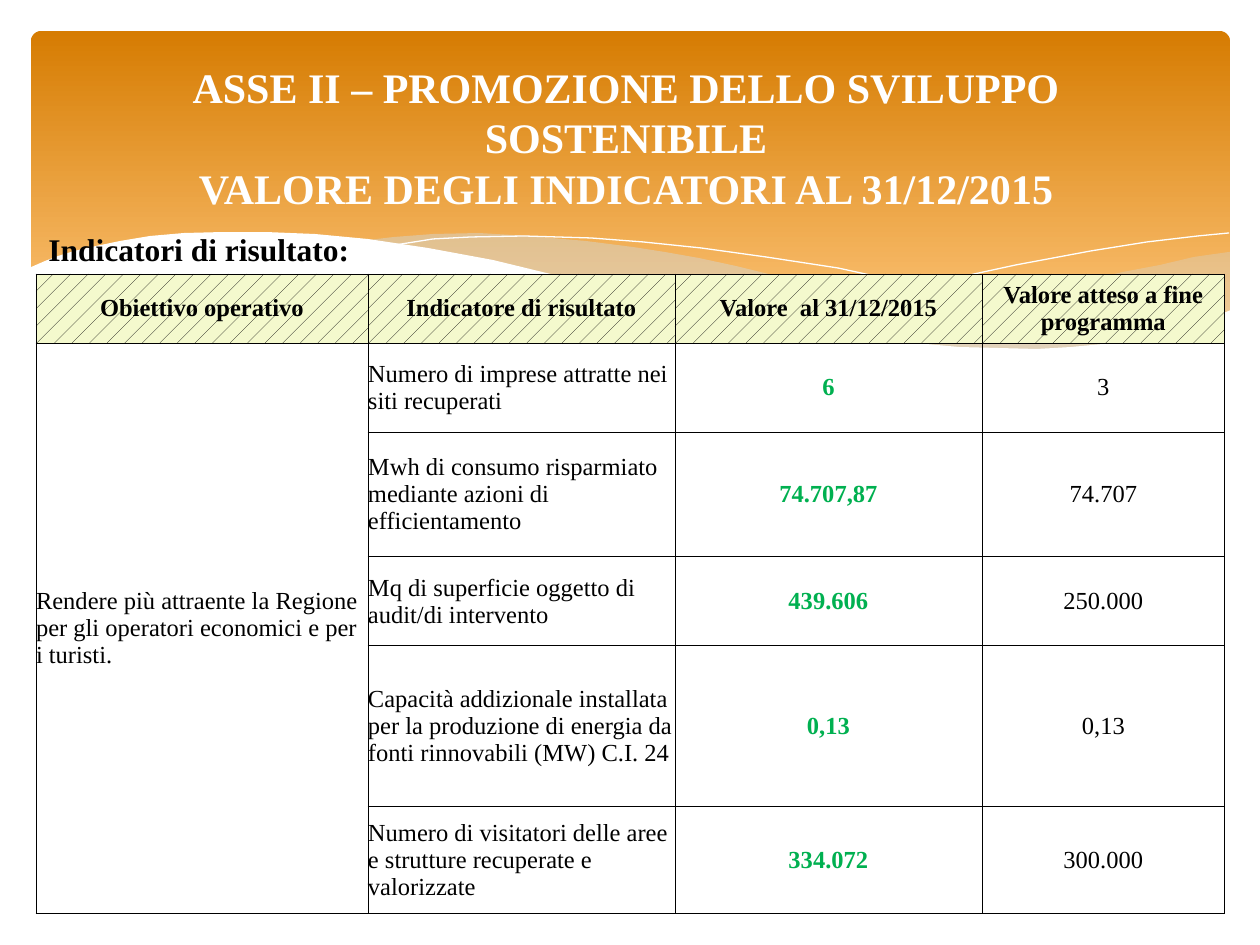
"""Build the slide with the result indicators of Asse II at 31/12/2015."""
from lxml.etree import SubElement
from pptx import Presentation
from pptx.dml.color import RGBColor
from pptx.enum.dml import MSO_PATTERN
from pptx.enum.shapes import MSO_SHAPE
from pptx.enum.text import MSO_ANCHOR, MSO_AUTO_SIZE, PP_ALIGN
from pptx.oxml import parse_xml
from pptx.oxml.ns import nsdecls, qn
from pptx.util import Emu, Pt

EMU_PER_PX = 914400 / 126
FONT = "Times New Roman"
BLACK = RGBColor(0x00, 0x00, 0x00)
WHITE = RGBColor(0xFF, 0xFF, 0xFF)
GREEN = RGBColor(0x00, 0xB0, 0x50)
MIST = RGBColor(0xCC, 0xDD, 0xEA)
CREAM = RGBColor(0xF4, 0xF9, 0xCD)
DARK_ORANGE = RGBColor(0xD6, 0x7C, 0x02)
LIGHT_ORANGE = RGBColor(0xFE, 0xC6, 0x7B)

TITLE = ["ASSE II – PROMOZIONE DELLO SVILUPPO SOSTENIBILE",
         "VALORE DEGLI INDICATORI AL 31/12/2015"]
SUBTITLE = "Indicatori di risultato:"
HEADER = ["Obiettivo operativo", "Indicatore di risultato",
          "Valore  al 31/12/2015", "Valore atteso a fine programma"]
OBJECTIVE = "Rendere più attraente la Regione per gli operatori economici e per i turisti."
INDICATORS = [
    ("Numero di imprese attratte nei siti recuperati", "6", "3"),
    ("Mwh di consumo risparmiato mediante azioni di efficientamento", "74.707,87", "74.707"),
    ("Mq di superficie oggetto di audit/di intervento", "439.606", "250.000"),
    ("Capacità addizionale installata per la produzione di energia da fonti "
     "rinnovabili (MW) C.I. 24", "0,13", "0,13"),
    ("Numero di visitatori delle aree e strutture recuperate e valorizzate",
     "334.072", "300.000"),
]
COLUMN_WIDTHS = [332, 307, 307, 243]
ROW_HEIGHTS = [69, 89, 125, 89, 161, 107]

RIGHT_WAVE = [
    (1229, 252), (1194, 257), (1160, 265), (1123, 272), (1085, 281), (1048, 290),
    (982, 305), (919, 319), (833, 334), (888, 341), (939, 346), (984, 349),
    (1026, 350), (1064, 349), (1099, 347), (1130, 343), (1160, 337), (1187, 330),
    (1213, 318), (1230, 311), (1230, 252)]
MIDDLE_WAVE = [
    (1125, 344), (1091, 339), (1017, 328), (934, 311), (842, 291), (793, 280),
    (736, 266), (699, 258), (665, 252), (633, 247), (586, 241), (529, 236),
    (479, 233), (433, 234), (394, 237), (360, 241), (407, 248), (456, 256),
    (509, 266), (566, 280), (619, 292), (713, 312), (757, 322), (799, 329),
    (838, 335), (876, 340), (911, 345), (943, 348), (974, 350), (1004, 350),
    (1043, 350), (1080, 349), (1104, 347)]
LONG_CREST = [
    (389, 246), (433, 239), (471, 237), (524, 236), (591, 238), (643, 242),
    (701, 248), (766, 257), (838, 268), (916, 285), (1002, 304), (1095, 329),
    (1143, 343)]
RIGHT_CREST = [
    (772, 324), (823, 310), (876, 296), (942, 281), (1016, 265), (1091, 251),
    (1147, 242), (1198, 236), (1229, 233)]
WHITE_WAVE = [
    (1231, 310), (1208, 319), (1184, 326), (1159, 334), (1133, 339), (1103, 344),
    (1071, 347), (1037, 349), (998, 348), (959, 347), (915, 343), (867, 338),
    (816, 330), (760, 320), (699, 309), (634, 294), (563, 277), (493, 260),
    (428, 248), (368, 239), (315, 234), (266, 232), (223, 232), (184, 233),
    (150, 236), (120, 241), (96, 246), (74, 251), (58, 256), (45, 261), (29, 268),
    (29, 415), (1231, 415)]
WAVES = [(RIGHT_WAVE, MIST, 29), (MIDDLE_WAVE, MIST, 40), (LONG_CREST, None, 0),
         (RIGHT_CREST, None, 0), (WHITE_WAVE, WHITE, 100)]


def px(length):
    return Emu(round(length * EMU_PER_PX))


def box(*lengths):
    return [px(length) for length in lengths]


def write(frame, lines, size, color, bold=True, align=PP_ALIGN.LEFT):
    frame.text = "\n".join(lines)
    for paragraph in frame.paragraphs:
        paragraph.alignment = align
        font = paragraph.font
        font.name, font.size, font.bold = FONT, Pt(size), bold
        font.color.rgb = color


def add_banner(shapes):
    banner = shapes.add_shape(MSO_SHAPE.ROUNDED_RECTANGLE, *box(31, 31, 1199, 340))
    banner.adjustments[0] = 0.03
    banner.shadow.inherit = False
    banner.line.fill.background()
    banner.fill.gradient()
    banner.fill.gradient_angle = 270
    stops = [(0, DARK_ORANGE), (0.9, LIGHT_ORANGE)]
    for stop, (position, color) in zip(banner.fill.gradient_stops, stops):
        stop.position = position
        stop.color.rgb = color


def add_wave(shapes, points, color, opacity):
    builder = shapes.build_freeform(*points[0], scale=EMU_PER_PX)
    builder.add_line_segments(points[1:], close=color is not None)
    wave = builder.convert_to_shape()
    wave.shadow.inherit = False
    if color is None:
        wave.fill.background()
        wave.line.color.rgb = WHITE
        wave.line.width = Pt(0)
        return
    wave.line.fill.background()
    wave.fill.solid()
    wave.fill.fore_color.rgb = color
    if opacity < 100:
        tint = wave._element.spPr.find(qn("a:solidFill"))[0]
        SubElement(tint, qn("a:alpha"), val=str(opacity * 1000))


def add_borders(cell):
    properties = cell._tc.get_or_add_tcPr()
    for index, side in enumerate("LRTB"):
        properties.insert(index, parse_xml(
            f'<a:ln{side} {nsdecls("a")} w="{Pt(0.5)}"><a:solidFill>'
            f'<a:srgbClr val="{BLACK}"/></a:solidFill></a:ln{side}>'))


def add_indicator_table(shapes):
    rows = [HEADER] + [("", *indicator) for indicator in INDICATORS]
    table = shapes.add_table(len(rows), len(HEADER), *box(
        36, 274, sum(COLUMN_WIDTHS), sum(ROW_HEIGHTS))).table
    table.first_row = table.horz_banding = False
    for column, width in zip(table.columns, COLUMN_WIDTHS):
        column.width = px(width)
    for row, height in zip(table.rows, ROW_HEIGHTS):
        row.height = px(height)
    for r, texts in enumerate(rows):
        for c, text in enumerate(texts):
            cell = table.cell(r, c)
            cell.margin_left = cell.margin_right = cell.margin_top = cell.margin_bottom = 0
            cell.vertical_anchor = MSO_ANCHOR.MIDDLE
            reached = r > 0 and c == 2
            write(cell.text_frame, [text], 14, GREEN if reached else BLACK,
                  r == 0 or reached, PP_ALIGN.CENTER if r == 0 or c > 1 else PP_ALIGN.LEFT)
            if r == 0:
                cell.fill.patterned()
                cell.fill.pattern = MSO_PATTERN.PERCENT_5
                cell.fill.fore_color.rgb = BLACK
                cell.fill.back_color.rgb = CREAM
            else:
                cell.fill.background()
            add_borders(cell)
    objective = table.cell(1, 0)
    objective.merge(table.cell(len(INDICATORS), 0))
    write(objective.text_frame, [OBJECTIVE], 14, BLACK, False)


def main():
    presentation = Presentation()
    presentation.slide_width, presentation.slide_height = box(1260, 945)
    slide = presentation.slides.add_slide(presentation.slide_layouts[5])
    shapes = slide.shapes
    title = shapes.title

    add_banner(shapes)
    for wave in WAVES:
        add_wave(shapes, *wave)

    shapes._spTree.append(title._element)
    title.left, title.top, title.width, title.height = box(35, 55, 1182, 165)
    title.text_frame.vertical_anchor = MSO_ANCHOR.TOP
    title.text_frame.auto_size = MSO_AUTO_SIZE.NONE
    write(title.text_frame, TITLE, 24, WHITE, align=PP_ALIGN.CENTER)

    subtitle = shapes.add_textbox(*box(36, 224, 329, 51)).text_frame
    subtitle.word_wrap = False
    write(subtitle, [SUBTITLE], 18, BLACK)

    add_indicator_table(shapes)
    presentation.save("out.pptx")


if __name__ == "__main__":
    main()
